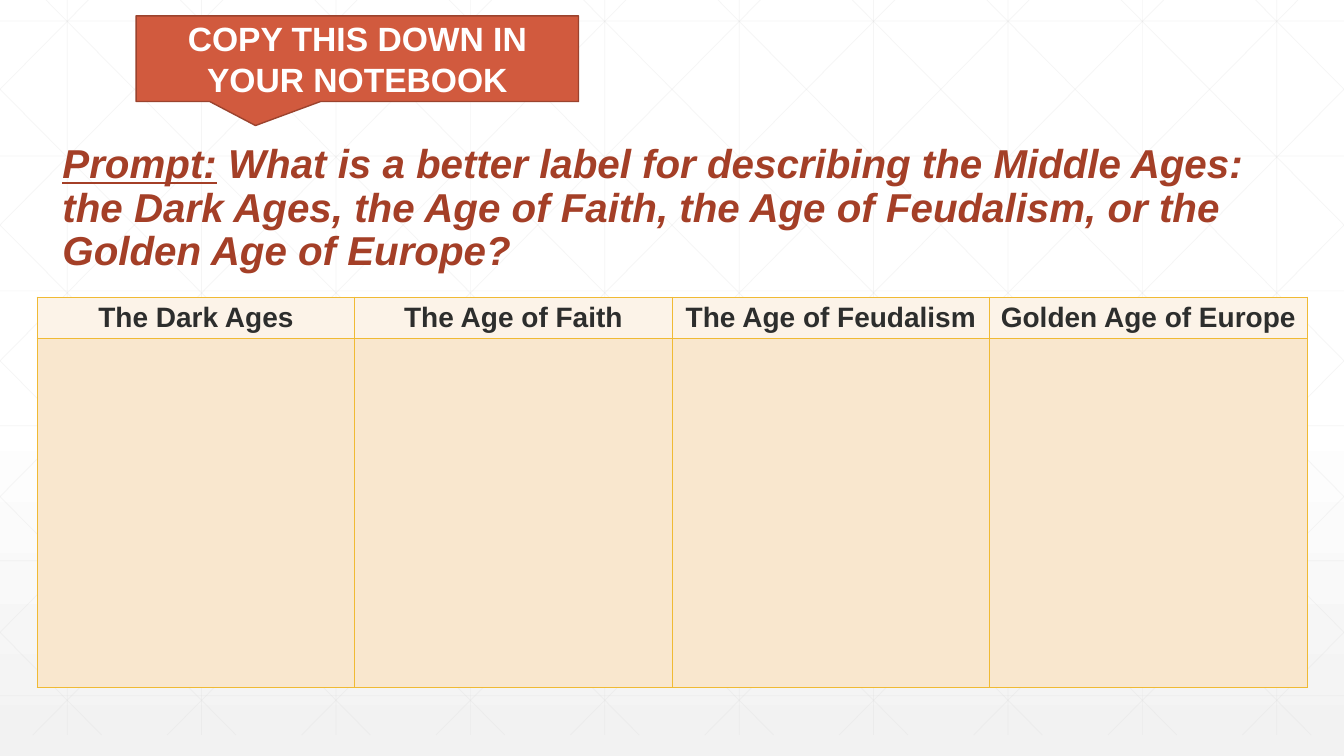
from dataclasses import dataclass
from typing import Iterator

from lxml.etree import SubElement as Sub
from pptx import Presentation
from pptx.dml.color import RGBColor as Rgb
from pptx.enum.shapes import MSO_CONNECTOR as Link, MSO_SHAPE as Shape
from pptx.enum.text import MSO_ANCHOR as Anchor, MSO_AUTO_SIZE as Fit, PP_ALIGN as Align
from pptx.oxml import parse_xml
from pptx.oxml.ns import nsdecls, qn
from pptx.util import Cm, Pt


@dataclass(frozen=True)
class Theme:
    font: str = "Arial"
    white: str = "FFFFFF"
    base: str = "F2F2F2"
    grid: str = "D9D9D9"
    ink: str = "2D2E2D"
    rust: str = "A43F27"
    fill: str = "D15A3E"
    edge: str = "9B432E"
    gold: str = "F0BA34"
    head: str = "FCF3E8"
    body: str = "F9E7CE"
    title: float = 28.8
    note: float = 24
    label: float = 20


@dataclass(frozen=True)
class Line:
    x1: float
    y1: float
    x2: float
    y2: float


@dataclass(frozen=True)
class Box:
    left: float
    top: float
    width: float
    height: float

    def place(self) -> tuple:
        return Cm(self.left), Cm(self.top), Cm(self.width), Cm(self.height)


T = Theme()
WIDE, HIGH = 33.87, 19.05
STEP = WIDE / 10   # gap between lattice lines
FLOOR = 18.52      # lower end of the lattice
SLOPE = 0.99       # sideways run of a diagonal per unit down

NOTE = Box(3.43, 0.4, 11.15, 2.16)
PROMPT = Box(1.32, 3.86, 30.84, 3.18)
TABLE = Box(0.94, 7.49, 32, 9.82)
ROWS = (1.03, 8.79)
LABELS = ("The Dark Ages", "The Age of Faith", "The Age of Feudalism", "Golden Age of Europe")


def write(par, text: str, *, size: float, color: str, italic: bool = False,
          under: bool = False, align=Align.CENTER) -> None:
    par.alignment = align
    run = par.add_run()
    run.text = text
    font = run.font
    font.name, font.size, font.bold = T.font, Pt(size), True
    font.italic, font.underline = italic, under
    font.color.rgb = Rgb.from_string(color)


def lattice() -> Iterator[Line]:
    for i in range(10):
        x = STEP * (i + 0.5)
        yield Line(x, 0, x, FLOOR)
    for i in range(6):
        y = 0.53 + 3.4 * i
        yield Line(0, y, WIDE, y)
    # Diagonals cut at the slide edges, each with its mirror
    for i in range(-5, 10):
        x = 1.16 + STEP * i
        top = max(0, -x / SLOPE)
        end = min(FLOOR, (WIDE - x) / SLOPE)
        a, b = x + SLOPE * top, x + SLOPE * end
        yield Line(a, top, b, end)
        yield Line(WIDE - a, top, WIDE - b, end)


def draw(slide, line: Line) -> None:
    link = slide.shapes.add_connector(
        Link.STRAIGHT, Cm(line.x1), Cm(line.y1), Cm(line.x2), Cm(line.y2))
    link.line.width = Pt(0.5)
    link.line.color.rgb = Rgb.from_string(T.grid)
    props = link._element.spPr
    Sub(next(props.iter(qn("a:srgbClr"))), qn("a:alpha"), val="25000")
    Sub(props, qn("a:effectLst"))


def shade(slide) -> None:
    fill = slide.background.fill
    fill.gradient()
    fill.gradient_angle = 270
    stops = next(slide.background._cSld.iter(qn("a:gsLst")))
    for old in list(stops):
        stops.remove(old)
    for pos, color in ((0, T.white), (53, T.white), (100, T.base)):
        stop = Sub(stops, qn("a:gs"), pos=str(pos * 1000))
        Sub(stop, qn("a:srgbClr"), val=color)


def border(cell) -> None:
    props = cell._tc.get_or_add_tcPr()
    for i, side in enumerate("LRTB"):
        props.insert(i, parse_xml(
            f'<a:ln{side} {nsdecls("a")} w="{Pt(1)}"><a:solidFill>'
            f'<a:srgbClr val="{T.gold}"/></a:solidFill></a:ln{side}>'))


def add_chart(slide) -> None:
    table = slide.shapes.add_table(len(ROWS), len(LABELS), *TABLE.place()).table
    table.first_row = table.horz_banding = False
    for col in table.columns:
        col.width = Cm(TABLE.width / len(LABELS))
    for row, high, color in zip(table.rows, ROWS, (T.head, T.body)):
        row.height = Cm(high)
        for cell in row.cells:
            cell.fill.solid()
            cell.fill.fore_color.rgb = Rgb.from_string(color)
            border(cell)
    for cell, label in zip(table.rows[0].cells, LABELS):
        write(cell.text_frame.paragraphs[0], label, size=T.label, color=T.ink)


def add_prompt(slide) -> None:
    title = slide.shapes.title
    slide.shapes._spTree.append(title._element)  # in front of the lattice
    title.left, title.top, title.width, title.height = PROMPT.place()
    frame = title.text_frame
    frame.auto_size, frame.vertical_anchor = Fit.NONE, Anchor.BOTTOM
    par = frame.paragraphs[0]
    par.line_spacing = 0.9
    look = dict(size=T.title, color=T.rust, italic=True, align=Align.LEFT)
    write(par, "Prompt:", under=True, **look)
    write(par, " What is a better label for describing the Middle Ages: the Dark Ages, "
          "the Age of Faith, the Age of Feudalism, or the Golden Age of Europe?", **look)


def add_note(slide) -> None:
    note = slide.shapes.add_shape(Shape.RECTANGULAR_CALLOUT, *NOTE.place())
    note.shadow.inherit = False
    note.adjustments[0], note.adjustments[1] = -0.23, 0.78
    note.fill.solid()
    note.fill.fore_color.rgb = Rgb.from_string(T.fill)
    note.line.color.rgb = Rgb.from_string(T.edge)
    note.line.width = Pt(1)
    frame = note.text_frame
    frame.word_wrap, frame.vertical_anchor = True, Anchor.MIDDLE
    write(frame.paragraphs[0], "COPY THIS DOWN IN YOUR NOTEBOOK", size=T.note, color=T.white)


def main() -> None:
    deck = Presentation()
    deck.slide_width, deck.slide_height = Cm(WIDE), Cm(HIGH)
    slide = deck.slides.add_slide(deck.slide_layouts.get_by_name("Title Only"))

    # Backdrop
    shade(slide)
    for line in lattice():
        draw(slide, line)

    # Content
    add_prompt(slide)
    add_chart(slide)
    add_note(slide)
    deck.save("out.pptx")


if __name__ == "__main__":
    main()
